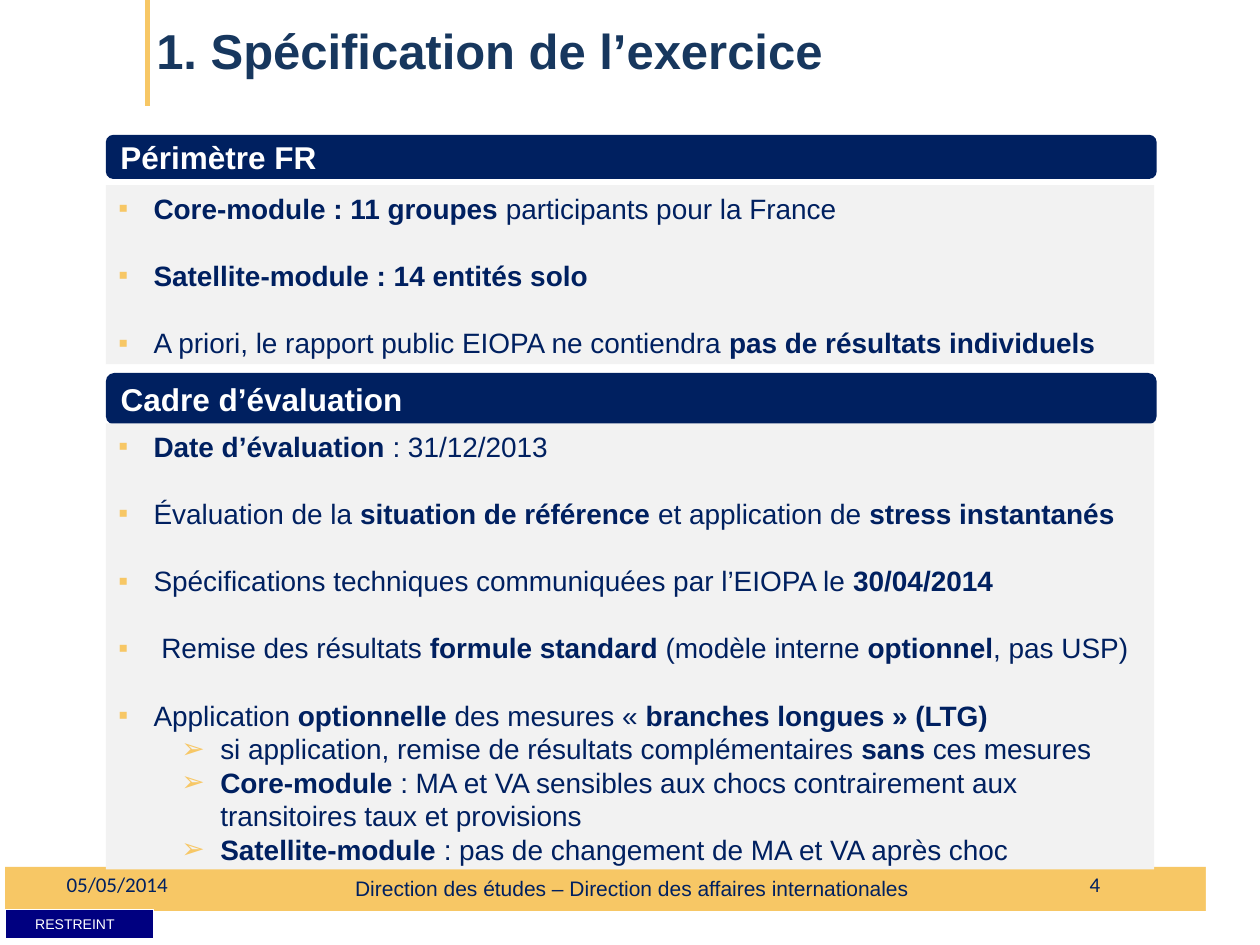
from lxml.etree import SubElement as Sub
from pptx import Presentation
from pptx.dml.color import RGBColor
from pptx.enum.shapes import MSO_CONNECTOR as Link, MSO_SHAPE as Shape
from pptx.enum.text import MSO_ANCHOR as Anchor, PP_ALIGN as Align
from pptx.oxml.ns import qn
from pptx.util import Inches, Pt

NAVY = RGBColor(0x00, 0x20, 0x60)
BLUE = RGBColor(0x17, 0x37, 0x5E)
DEEP = RGBColor(0x00, 0x00, 0x80)
GOLD = RGBColor(0xF7, 0xC7, 0x65)
GREY = RGBColor(0xF2, 0xF2, 0xF2)
WHITE = RGBColor(0xFF, 0xFF, 0xFF)

LEFT = 0.84
LINE = Pt(19.2)

# Each panel: heading, its top and height, body top and height, items.
# An item is a level and a text in which ** switches bold on and off.
PANELS = [
    ("Périmètre FR", 1.07, 0.35, 1.47, 1.42, [
        (0, "**Core-module : 11 groupes** participants pour la France"),
        (0, "**Satellite-module : 14 entités solo**"),
        (0, "A priori, le rapport public EIOPA ne contiendra **pas de résultats individuels**"),
    ]),
    ("Cadre d’évaluation", 2.96, 0.41, 3.36, 3.54, [
        (0, "**Date d’évaluation** : 31/12/2013"),
        (0, "Évaluation de la **situation de référence** et application de **stress instantanés**"),
        (0, "Spécifications techniques communiquées par l’EIOPA le **30/04/2014**"),
        (0, " Remise des résultats **formule standard** (modèle interne **optionnel**, pas USP)"),
        (0, "Application **optionnelle** des mesures « **branches longues » (LTG)**"),
        (1, "si application, remise de résultats complémentaires **sans** ces mesures"),
        (1, "**Core-module** : MA et VA sensibles aux chocs contrairement aux transitoires taux et provisions"),
        (1, "**Satellite-module **: pas de changement de MA et VA après choc"),
    ]),
]
# Per level: bullet sign, left margin, hanging indent
MARKS = [("▪", 0.28, -0.28), ("➢", 0.81, -0.31)]

deck = Presentation()
deck.slide_width, deck.slide_height = Inches(10), Inches(7.5)
slide = deck.slides.add_slide(deck.slide_layouts[5])
shapes = slide.shapes


def block(kind, box, fill):
    """Add a plain filled shape without outline or shadow."""
    shape = shapes.add_shape(kind, *map(Inches, box))
    shape.shadow.inherit = False
    shape.fill.solid()
    shape.fill.fore_color.rgb = fill
    shape.line.fill.background()
    return shape


def write(frame, text, size, color, name="Arial", bold=False,
          align=Align.LEFT, anchor=Anchor.MIDDLE):
    """Fill a text frame with one paragraph."""
    frame.word_wrap = True
    frame.vertical_anchor = anchor
    para = frame.paragraphs[0]
    para.text = text
    para.alignment = align
    font = para.font
    font.name, font.size, font.bold = name, Pt(size), bold
    font.color.rgb = color


# Title and its rule
title = shapes.title
title.left, title.top, title.width, title.height = map(Inches, (1.14, -0.03, 8.74, 0.86))
write(title.text_frame, "1. Spécification de l’exercice", 28, BLUE, bold=True)

rule = shapes.add_connector(Link.STRAIGHT, Inches(1.17), 0, Inches(1.17), Inches(0.84))
rule.line.color.rgb = GOLD
rule.line.width = Pt(2.75)
Sub(rule.line._get_or_add_ln().getparent(), qn("a:effectLst"))

# Footer
block(Shape.RECTANGLE, (0.04, 6.88, 9.76, 0.35), GOLD)
block(Shape.RECTANGLE, (9.57, 6.74, 0.28, 0.66), WHITE)

table = shapes.add_table(1, 1, *map(Inches, (0.04, 7.22, 1.18, 0.23))).table
cell = table.cell(0, 0)
cell.fill.solid()
cell.fill.fore_color.rgb = DEEP
cell.margin_right = Inches(0.17)
write(cell.text_frame, "RESTREINT", 8, WHITE, align=Align.CENTER)
cell.vertical_anchor = Anchor.MIDDLE

for text, box, name, align, anchor in [
    ("Direction des études – Direction des affaires internationales",
     (2.72, 6.9, 4.72, 0.55), "Arial", Align.LEFT, Anchor.TOP),
    ("4", (6.5, 6.82, 2.33, 0.4), "Calibri", Align.RIGHT, Anchor.MIDDLE),
    ("05/05/2014", (0.43, 6.82, 2.33, 0.4), "Calibri", Align.LEFT, Anchor.MIDDLE),
]:
    label = shapes.add_textbox(*map(Inches, box))
    write(label.text_frame, text, 12, NAVY, name, align=align, anchor=anchor)

# Panels
for head, top, high, start, depth, items in PANELS:
    bar = block(Shape.ROUNDED_RECTANGLE, (LEFT, top, 8.34, high), NAVY)
    write(bar.text_frame, head, 18, WHITE, bold=True)

    frame = block(Shape.RECTANGLE, (LEFT, start, 8.32, depth), GREY).text_frame
    frame.word_wrap = True
    frame.vertical_anchor = Anchor.TOP
    for i, (level, text) in enumerate(items):
        para = frame.add_paragraph() if i else frame.paragraphs[0]
        para.level = level
        para.alignment = Align.LEFT
        para.line_spacing = LINE
        para.space_before = LINE if i and level == 0 else Pt(0)
        sign, margin, hang = MARKS[level]
        props = para._p.get_or_add_pPr()
        props.set("marL", str(Inches(margin)))
        props.set("indent", str(Inches(hang)))
        Sub(Sub(props, qn("a:buClr")), qn("a:srgbClr"), val=str(GOLD))
        Sub(props, qn("a:buFont"), typeface="Arial")
        Sub(props, qn("a:buChar"), char=sign)
        para.font.name, para.font.size = "Arial", Pt(16)
        para.font.color.rgb = NAVY
        for n, part in enumerate(text.split("**")):
            if part:
                run = para.add_run()
                run.text = part
                run.font.bold = n % 2 == 1

deck.save("out.pptx")
